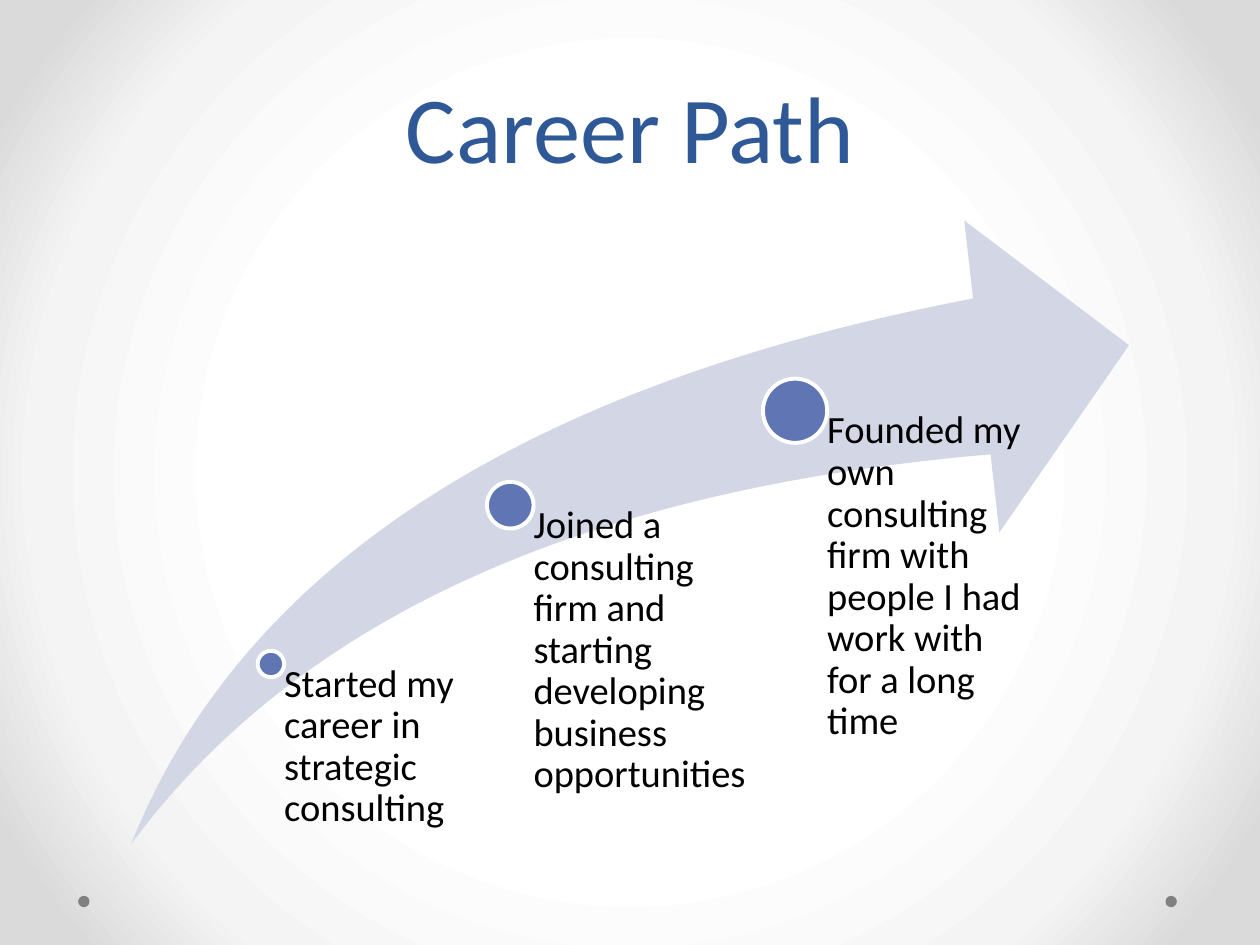
from pptx import Presentation, oxml
from pptx import util as u
from pptx.dml.color import RGBColor
from pptx.enum import shapes, text

FONT = "Calibri"
TITLE = "Career Path"
BACKDROP = [(50, "FFFFFF"), (76, "F4F4F4"), (92, "DADADA")]
CORNER_DOTS = [0.62, 9.25]
ARROW = (1.04, 1.75, 7.92, 4.95)
MILESTONES = [
    ("Started my career in strategic consulting", 2.15, 5.27, 0.21, 1.85),
    ("Joined a consulting firm and starting developing business opportunities",
     4.05, 4.01, 0.37, 1.9),
    ("Founded my own consulting firm with people I had work with for a long time",
     6.31, 3.26, 0.51, 1.9),
]


def colour(value):
    return RGBColor.from_string(value)


def place(*lengths):
    return [u.Inches(length) for length in lengths]


def add_shape(page, kind, position, fill, line=None):
    shape = page.shapes.add_shape(kind, *place(*position))
    shape.shadow.inherit = False
    shape.fill.solid()
    shape.fill.fore_color.rgb = colour(fill)
    if line:
        shape.line.color.rgb = colour(line)
        shape.line.width = u.Pt(2.25)
    else:
        shape.line.fill.background()
    return shape


def add_span(para, words, size, value):
    span = para.add_run()
    span.text = words
    span.font.name = FONT
    span.font.size = u.Pt(size)
    span.font.color.rgb = colour(value)


def paint_background(page):
    fill = page.background.fill
    fill.solid()
    solid = page.background._cSld.bg.bgPr[0]
    stops = "".join(
        f'<a:gs pos="{position * 1000}"><a:srgbClr val="{value}"/></a:gs>'
        for position, value in BACKDROP
    )
    gradient = oxml.parse_xml(
        f'<a:gradFill {oxml.ns.nsdecls("a")} rotWithShape="1"><a:gsLst>{stops}</a:gsLst>'
        '<a:path path="circle"><a:fillToRect l="50000" t="50000" r="50000" b="50000"/>'
        "</a:path></a:gradFill>"
    )
    solid.getparent().replace(solid, gradient)


def add_title(page):
    title = page.shapes.title
    title.left, title.top, title.width, title.height = place(0.5, 0.17, 9, 1.33)
    frame = title.text_frame
    frame.auto_size = text.MSO_AUTO_SIZE.NONE
    frame.vertical_anchor = text.MSO_ANCHOR.BOTTOM
    para = frame.paragraphs[0]
    para.alignment = text.PP_ALIGN.CENTER
    para.line_spacing = u.Pt(58)
    add_span(para, TITLE, 54, "2F5897")


def add_milestone(page, words, x, y, diameter, width):
    radius = diameter / 2
    add_shape(page, shapes.MSO_SHAPE.OVAL,
              (x - radius, y - radius, diameter, diameter), "6076B4", "FFFFFF")
    bottom = ARROW[1] + ARROW[3]
    box = page.shapes.add_textbox(*place(x, y, width, bottom - y))
    frame = box.text_frame
    frame.word_wrap = True
    frame.margin_left = u.Inches(radius)
    frame.margin_top = frame.margin_right = frame.margin_bottom = 0
    para = frame.paragraphs[0]
    para.alignment = text.PP_ALIGN.LEFT
    para.line_spacing = 0.9
    add_span(para, words, 22, "000000")


def main():
    deck = Presentation()
    deck.slide_width, deck.slide_height = place(10, 7.5)
    page = deck.slides.add_slide(deck.slide_layouts[5])
    paint_background(page)
    for left in CORNER_DOTS:
        add_shape(page, shapes.MSO_SHAPE.OVAL, (left, 7.11, 0.09, 0.09), "808080")
    add_title(page)
    arrow = add_shape(page, shapes.MSO_SHAPE.SWOOSH_ARROW, ARROW, "D2D6E5")
    arrow.adjustments[0] = arrow.adjustments[1] = 0.25
    for milestone in MILESTONES:
        add_milestone(page, *milestone)
    deck.save("out.pptx")


if __name__ == "__main__":
    main()
